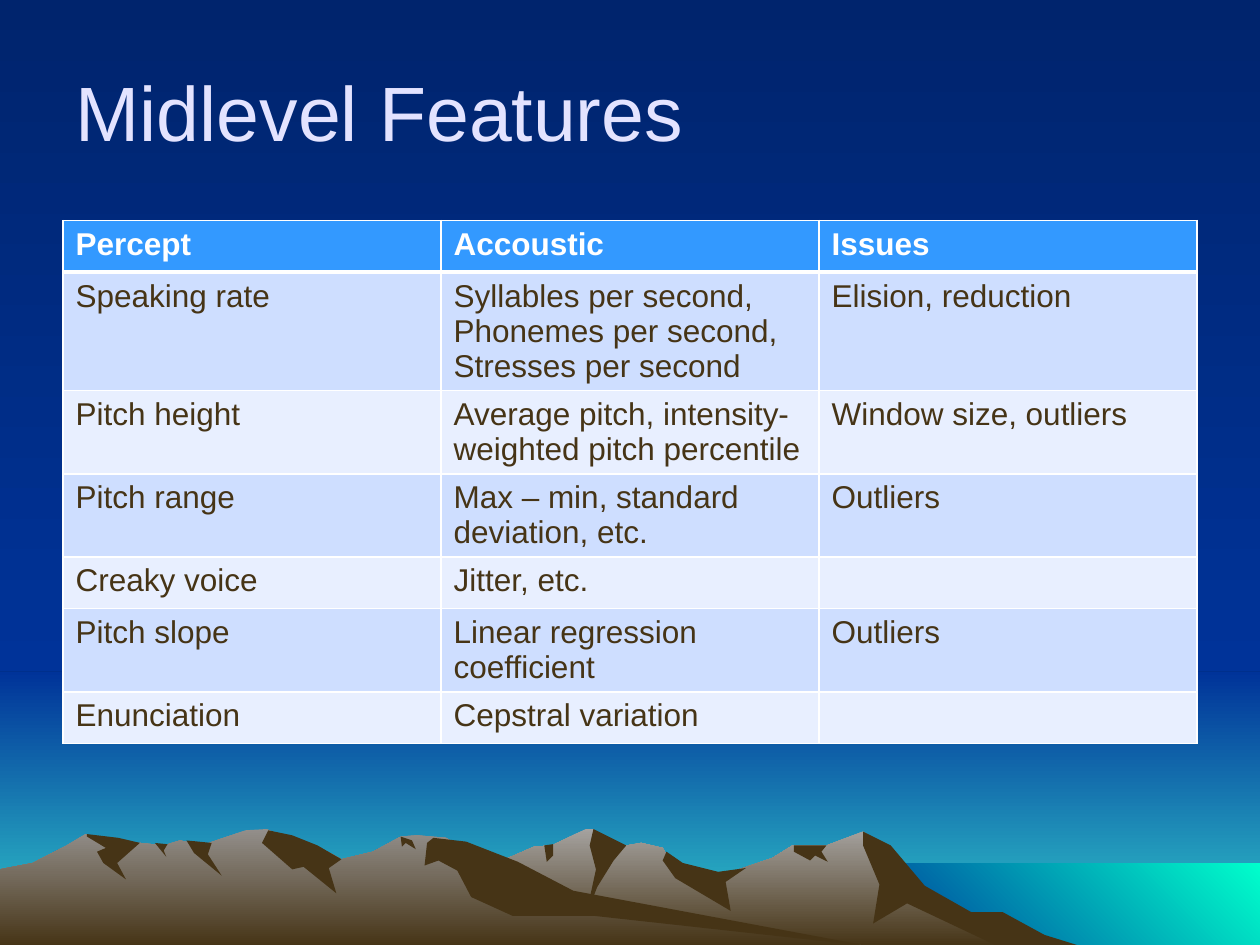
from dataclasses import dataclass
from lxml.etree import SubElement
from pptx import Presentation
from pptx.dml.color import RGBColor
from pptx.enum.shapes import MSO_SHAPE
from pptx.enum.text import MSO_ANCHOR, PP_ALIGN
from pptx.oxml.ns import qn
from pptx.util import Inches, Pt

COLORS = {
    "night": "00246D", "blue": "003399", "teal": "33CCCC", "aqua": "00FFCC",
    "rock": "463416", "haze": "A5A29F", "mist": "938F8B", "title": "E3E3FF",
    "white": "FFFFFF", "header": "3399FF", "band": "CEDEFF", "pale": "E8EFFF",
}
DOWN, UP_RIGHT = 270, 45  # gradient directions, counter-clockwise degrees
WIDTH, HEIGHT = 10, 7.5
HORIZON, SHORE = 5.33, 6.85  # where the sky changes colour, where the sea starts
FOOT = 7.51  # base line of both mountain ranges
MARGIN = 0.5
ROW_HEIGHT = 0.41

Point = tuple[float, float]


@dataclass
class Panel:
    x: float
    y: float
    w: float
    h: float
    colors: tuple[str, ...]
    angle: int = DOWN


@dataclass
class MountainRange:
    """A skyline from left to right, filled down to the foot, with dark faces."""
    top_color: str
    left: float
    right: float
    skyline: list[Point]
    faces: dict[str, list[Point]]


PANELS = [
    Panel(0, HORIZON, WIDTH, HEIGHT - HORIZON, ("blue", "teal")),
    Panel(0, 0, WIDTH, HORIZON, ("night", "blue")),
    Panel(6.83, SHORE, 3.17, 0.67, ("blue", "aqua"), UP_RIGHT),
]

RIGHT_RANGE = MountainRange(
    top_color="haze", left=2.58, right=8.21,
    skyline=[(2.77, 7.39), (3.27, 7.09), (3.94, 6.85), (4.24, 6.72), (4.38, 6.71),
             (4.65, 6.58), (4.71, 6.58), (4.86, 6.73), (5.09, 6.69), (5.26, 6.73),
             (5.36, 6.9), (5.66, 6.97), (6.13, 6.81), (6.29, 6.71), (6.56, 6.71),
             (6.85, 6.6), (7.02, 6.71), (7.23, 6.98), (7.64, 7.23), (8.02, 7.4)],
    faces={
        "east slope": [(6.85, 6.6), (7.07, 6.71), (7.34, 7.03), (7.71, 7.24),
                       (7.96, 7.24), (8.29, 7.42), (8.58, FOOT), (7.92, FOOT),
                       (7.2, 7.17), (6.93, 7.33), (6.98, 7.02), (6.85, 6.71)],
        "middle peak": [(4.71, 6.58), (4.97, 6.71), (4.87, 6.83), (4.74, 7.04),
                        (4.65, 7.27), (4.73, 6.9), (4.68, 6.71)],
        "middle shoulder": [(5.29, 6.76), (5.42, 6.85), (5.7, 6.92), (5.92, 6.89),
                            (5.76, 7), (5.8, 7.23), (5.36, 6.97), (5.26, 6.83)],
        "east notch": [(6.3, 6.71), (6.56, 6.71), (6.52, 6.76), (6.57, 6.84),
                       (6.47, 6.79), (6.43, 6.83), (6.3, 6.76)],
        "west notch": [(4.32, 6.71), (4.39, 6.7), (4.39, 6.79), (4.34, 6.84)],
    },
)

LEFT_RANGE = MountainRange(
    top_color="mist", left=0, right=6.9,
    skyline=[(0, 6.9), (0.26, 6.85), (0.53, 6.71), (0.68, 6.62), (0.94, 6.71),
             (1.11, 6.69), (1.3, 6.71), (1.43, 6.67), (1.6, 6.71), (1.95, 6.59),
             (2.12, 6.58), (2.23, 6.63), (2.36, 6.81), (2.6, 6.76), (2.71, 6.82),
             (2.96, 6.76), (3.18, 6.64), (3.31, 6.63), (3.54, 6.65), (4.32, 7.12),
             (6.67, 7.48)],
    faces={
        "main peak": [(2.13, 6.59), (2.32, 6.63), (2.52, 6.71), (2.71, 6.82),
                      (2.61, 6.89), (2.67, 7.09), (2.41, 6.88), (2.32, 6.9),
                      (2.08, 6.69)],
        "long slope": [(3.44, 6.65), (3.7, 6.68), (4.11, 6.84), (4.55, 7.07),
                       (6.9, FOOT), (4.72, 7.27), (4.07, 7.27), (3.74, 7.12),
                       (3.63, 6.91), (3.48, 6.83), (3.37, 6.87), (3.39, 6.69)],
        "slope tip": [(3.18, 6.64), (3.27, 6.67), (3.3, 6.74), (3.22, 6.69),
                      (3.19, 6.72)],
        "inner gully": [(1.48, 6.67), (1.68, 6.69), (1.65, 6.78), (1.76, 6.95),
                        (1.54, 6.77)],
        "small gully": [(1.23, 6.69), (1.33, 6.7), (1.3, 6.75), (1.32, 6.8)],
        "west peak": [(0.69, 6.62), (0.94, 6.65), (1.11, 6.69), (0.93, 6.85),
                      (1, 6.98), (0.82, 6.85), (0.77, 6.76), (0.84, 6.73),
                      (0.69, 6.64)],
    },
)

ROWS = [
    ("Percept", "Accoustic", "Issues"),
    ("Speaking rate",
     "Syllables per second,\nPhonemes per second,\nStresses per second",
     "Elision, reduction"),
    ("Pitch height", "Average pitch, intensity-weighted pitch percentile",
     "Window size, outliers"),
    ("Pitch range", "Max – min, standard deviation, etc.", "Outliers"),
    ("Creaky voice", "Jitter, etc.", ""),
    ("Pitch slope", "Linear regression coefficient", "Outliers"),
    ("Enunciation", "Cepstral variation", ""),
]


def rgb(name: str) -> RGBColor:
    return RGBColor.from_string(COLORS[name])


def paint(fill, colors: tuple[str, ...], angle: int = DOWN) -> None:
    if len(colors) == 1:
        fill.solid()
        fill.fore_color.rgb = rgb(colors[0])
        return
    fill.gradient()
    fill.gradient_angle = angle
    for stop, name in zip(fill.gradient_stops, colors):
        stop.color.rgb = rgb(name)


def finish(sp, colors: tuple[str, ...], angle: int = DOWN) -> None:
    paint(sp.fill, colors, angle)
    sp.line.fill.background()
    sp.shadow.inherit = False


def draw_panel(s, panel: Panel) -> None:
    box = [Inches(v) for v in (panel.x, panel.y, panel.w, panel.h)]
    finish(s.shapes.add_shape(MSO_SHAPE.RECTANGLE, *box), panel.colors, panel.angle)


def draw_polygon(s, points: list[Point], colors: tuple[str, ...]) -> None:
    start, *rest = [(Inches(x), Inches(y)) for x, y in points]
    builder = s.shapes.build_freeform(*start)
    builder.add_line_segments(rest, close=True)
    finish(builder.convert_to_shape(), colors)


def draw_range(s, mountains: MountainRange) -> None:
    feet = [(mountains.right, FOOT), (mountains.left, FOOT)]
    draw_polygon(s, mountains.skyline + feet, (mountains.top_color, "rock"))
    for face in mountains.faces.values():
        draw_polygon(s, face, ("rock",))


def format_font(p, size: int, color: str, bold: bool = False) -> None:
    for r in p.runs:
        for key, value in {"name": "Arial", "size": Pt(size), "bold": bold}.items():
            setattr(r.font, key, value)
        r.font.color.rgb = rgb(color)


def draw_borders(cell, widths: dict[str, int]) -> None:
    tc_pr = cell._tc.get_or_add_tcPr()
    for i, (side, width) in enumerate(widths.items()):
        ln = SubElement(tc_pr, qn(f"a:{side}"), w=str(Pt(width)))
        SubElement(SubElement(ln, qn("a:solidFill")), qn("a:srgbClr"), val=COLORS["white"])
        tc_pr.insert(i, ln)  # borders come before the fill


def draw_table(s, rows: list[tuple[str, ...]]) -> None:
    box = (MARGIN, 1.75, WIDTH - 2 * MARGIN, ROW_HEIGHT * len(rows))
    table = s.shapes.add_table(len(rows), len(rows[0]), *map(Inches, box)).table
    table.horz_banding = False
    for i, texts in enumerate(rows):
        head = i == 0
        fill = "header" if head else ("band" if i % 2 else "pale")
        for j, text in enumerate(texts):
            cell = table.cell(i, j)
            cell.text = text
            paint(cell.fill, (fill,))
            draw_borders(cell, {"lnL": 1, "lnR": 1, "lnT": 3 if i == 1 else 1,
                                "lnB": 3 if head else 1})
            for p in cell.text_frame.paragraphs:
                format_font(p, 18, "white" if head else "rock", head)


def draw_title(s, text: str) -> None:
    title = s.shapes.title
    title.element.getparent().append(title.element)  # in front of the sky
    box = {"left": MARGIN, "top": 0.25, "width": WIDTH - 2 * MARGIN, "height": 1.25}
    for key, value in box.items():
        setattr(title, key, Inches(value))
    tf = title.text_frame
    tf.text = text
    tf.vertical_anchor = MSO_ANCHOR.MIDDLE
    tf.paragraphs[0].alignment = PP_ALIGN.LEFT
    format_font(tf.paragraphs[0], 44, "title")


def main() -> None:
    prs = Presentation()
    prs.slide_width, prs.slide_height = Inches(WIDTH), Inches(HEIGHT)
    s = prs.slides.add_slide(prs.slide_layouts[5])
    # Landscape
    paint(s.background.fill, ("night", "blue"))
    for panel in PANELS:
        draw_panel(s, panel)
    for mountains in (RIGHT_RANGE, LEFT_RANGE):
        draw_range(s, mountains)
    # Content
    draw_title(s, "Midlevel Features")
    draw_table(s, ROWS)
    prs.save("out.pptx")


if __name__ == "__main__":
    main()
